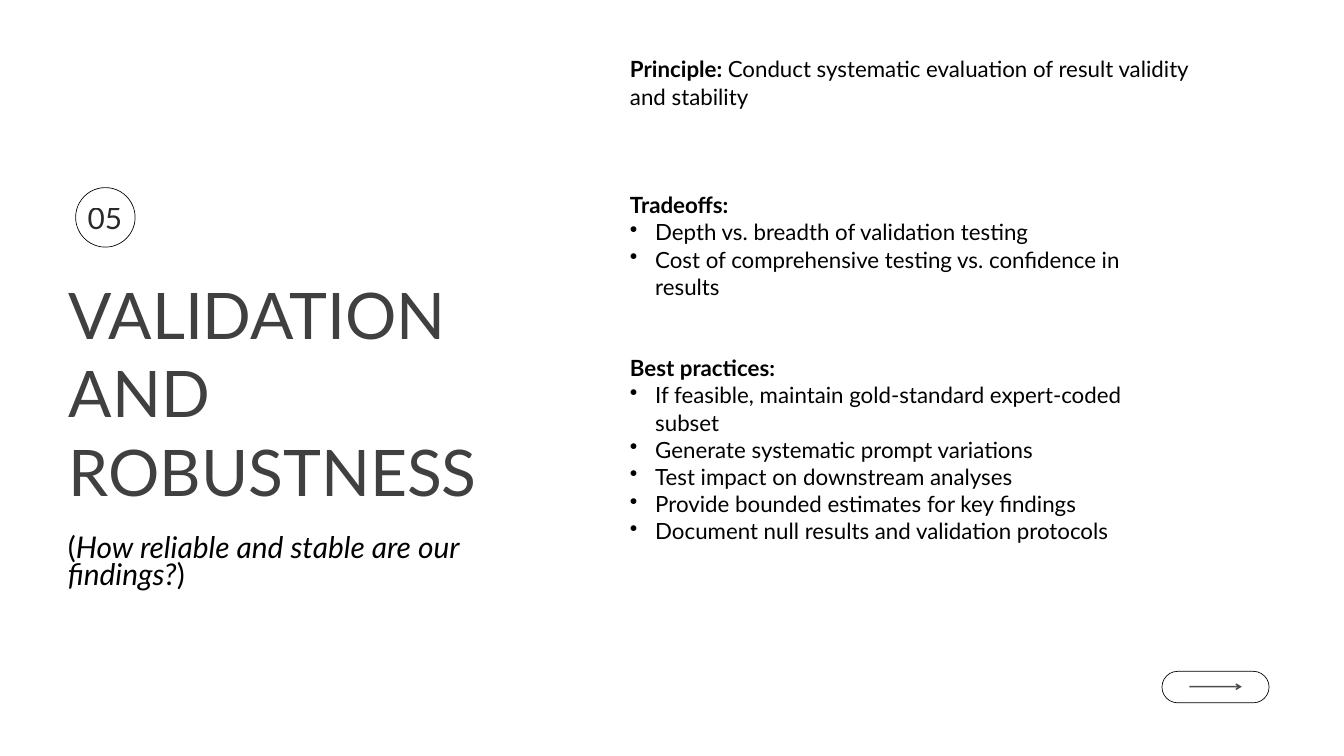
from pptx import Presentation
from pptx.dml.color import RGBColor
from pptx.enum.shapes import MSO_CONNECTOR, MSO_SHAPE
from pptx.enum.text import MSO_AUTO_SIZE, PP_ALIGN
from pptx.oxml.ns import qn
from pptx.util import Pt
from lxml.etree import SubElement

PX = 9525
COLORS = {"ink": "000000", "title": "404040", "paper": "FFFFFF"}


def px(*nums):
    return [n * PX for n in nums]


def fade(node, alpha):
    for tint in node.xpath(".//a:srgbClr"):
        SubElement(tint, qn("a:alpha"), val=str(alpha * 1000))


class Deck:
    font = "Lato"
    indent = 36

    def __init__(self, wide, high):
        self.prs = Presentation()
        self.prs.slide_width, self.prs.slide_height = px(wide, high)
        self.slide = self.prs.slides.add_slide(self.prs.slide_layouts[6])
        fill = self.slide.background.fill
        fill.solid()
        fill.fore_color.rgb = self.color("paper")

    def color(self, name):
        return RGBColor.from_string(COLORS[name])

    def box(self, left, top, wide, high):
        frame = self.slide.shapes.add_textbox(*px(left, top, wide, high)).text_frame
        frame.margin_left = frame.margin_right = 0
        frame.margin_top = frame.margin_bottom = 0
        frame.word_wrap = True
        frame.auto_size = MSO_AUTO_SIZE.SHAPE_TO_FIT_TEXT
        return frame

    def para(self, frame, lead, first=False, gap=0, bullet=False):
        para = frame.paragraphs[0] if first else frame.add_paragraph()
        if bullet:
            props = para._p.get_or_add_pPr()
            props.set("marL", str(self.indent * PX))
            props.set("indent", str(-self.indent * PX))
            SubElement(props, qn("a:buChar"), char="•")
        para.line_spacing = Pt(lead)
        if gap:
            para.space_before = Pt(gap)
        return para

    def run(self, para, text, size, color="ink", bold=False, italic=False, alpha=100):
        run = para.add_run()
        run.text = text
        font = run.font
        font.name, font.size = self.font, Pt(size)
        font.bold, font.italic = bold, italic
        font.color.rgb = self.color(color)
        if alpha < 100:
            fade(run._r, alpha)

    def outline(self, kind, left, top, wide, high):
        shape = self.slide.shapes.add_shape(kind, *px(left, top, wide, high))
        shape.shadow.inherit = False
        shape.fill.background()
        shape.line.color.rgb = self.color("ink")
        shape.line.width = Pt(0.75)
        return shape

    def arrow(self, start, end, level, alpha):
        link = self.slide.shapes.add_connector(
            MSO_CONNECTOR.STRAIGHT, *px(start, level, end, level))
        link.line.color.rgb = self.color("ink")
        link.line.width = Pt(1.5)
        props = link._element.spPr
        fade(props, alpha)
        SubElement(link.line._get_or_add_ln(), qn("a:tailEnd"), type="arrow")
        SubElement(props, qn("a:effectLst"))


def main():
    deck = Deck(1920, 1080)

    title = deck.para(deck.box(98, 391, 678, 339), 84, first=True)
    deck.run(title, "VALIDATION AND ROBUSTNESS", 68.8, color="title")

    query = deck.para(deck.box(97, 768, 639, 81), 29.1, first=True)
    deck.run(query, "(", 32)
    deck.run(query, "How reliable and stable are our findings?", 32, italic=True)
    deck.run(query, ")", 32)

    deck.outline(MSO_SHAPE.OVAL, 108, 268, 85, 85)
    number = deck.para(deck.box(115, 277, 70, 58), 44.6, first=True)
    number.alignment = PP_ALIGN.CENTER
    deck.run(number, "05", 31.9, alpha=83)

    pill = deck.outline(MSO_SHAPE.ROUNDED_RECTANGLE, 1660, 959, 153, 45)
    pill.adjustments[0] = 0.5
    deck.arrow(1699, 1774, 981, 71)

    size, lead = 23.9, 29.1
    parts = [
        ("Principle: ", "Conduct systematic evaluation of result validity and stability", 0, []),
        ("Tradeoffs:", "", 3, [
            "Depth vs. breadth of validation testing",
            "Cost of comprehensive testing vs. confidence in results",
        ]),
        ("Best practices:", "", 2, [
            "If feasible, maintain gold-standard expert-coded subset",
            "Generate systematic prompt variations",
            "Test impact on downstream analyses",
            "Provide bounded estimates for key findings",
            "Document null results and validation protocols",
        ]),
    ]
    body = deck.box(900, 79, 799, 703)
    for i, (head, rest, skip, points) in enumerate(parts):
        para = deck.para(body, lead, first=i == 0, gap=skip * lead)
        deck.run(para, head, size, bold=True)
        if rest:
            deck.run(para, rest, size)
        for point in points:
            deck.run(deck.para(body, lead, bullet=True), point, size)

    deck.prs.save("out.pptx")


if __name__ == "__main__":
    main()
